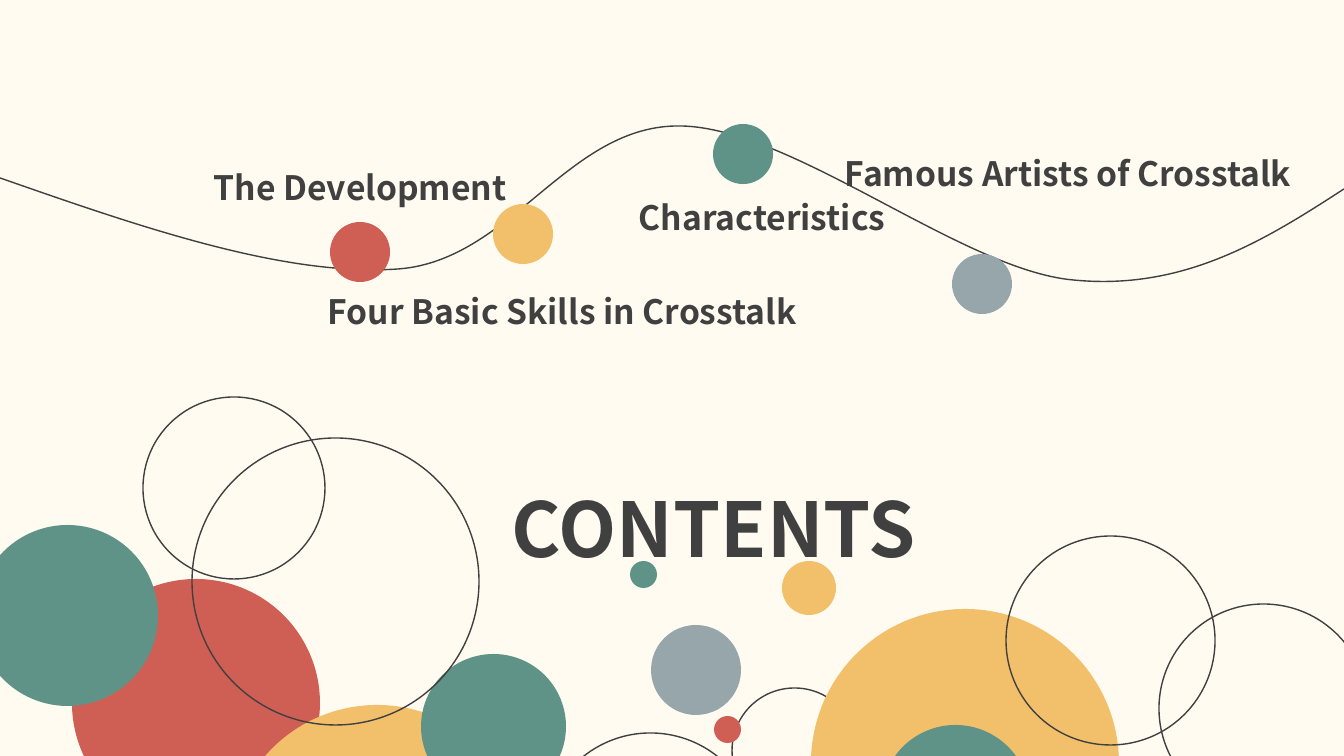
from lxml.etree import SubElement
from pptx import Presentation
from pptx.dml.color import RGBColor
from pptx.enum.shapes import MSO_SHAPE as Shape
from pptx.oxml.ns import qn
from pptx.util import Pt

PX = 9075
WIDTH, HEIGHT = 1344, 756
FONT = "Noto Sans CJK SC"
CREAM, INK = "FFFBF0", "404040"
RED, YELLOW, GREEN, GREY = "CF5F55", "F2C06B", "5F9387", "97A6AB"
OUTLINE = None

BUBBLES = [
    (72, 579, 248, RED),
    (229, 705, 296, YELLOW),
    (421, 654, 145, GREEN),
    (543, 733, 215, OUTLINE),
    (192, 438, 287, OUTLINE),
    (-23, 525, 181, GREEN),
    (732, 688, 125, OUTLINE),
    (811, 609, 308, YELLOW),
    (881, 725, 149, GREEN),
    (1006, 536, 209, OUTLINE),
    (1159, 604, 209, OUTLINE),
    (651, 625, 90, GREY),
    (714, 716, 27, RED),
    (630, 561, 27, GREEN),
    (782, 561, 54, YELLOW),
    (143, 397, 182, OUTLINE),
]

WAVE_START = (0, 178)
WAVE_CURVES = [
    [(143, 228), (285, 277), (399, 269)],
    [(512, 260), (568, 124), (681, 126)],
    [(793, 128), (962, 270), (1073, 280)],
    [(1183, 291), (1264, 241), (1344, 189)],
]

MARKER_SIZE = 60
TOPICS = [
    ("The Development", (204, 162, 322), (330, 222), RED),
    ("Four Basic Skills in Crosstalk", (318, 286, 510), (493, 204), YELLOW),
    ("Characteristics", (629, 192, 313), (713, 124), GREEN),
    ("Famous Artists of Crosstalk", (835, 148, 510), (952, 254), GREY),
]


def paint(fill, color):
    fill.solid()
    fill.fore_color.rgb = RGBColor.from_string(color)


def style_outline(shape):
    shape.shadow.inherit = False
    shape.fill.background()
    paint(shape.line.fill, INK)
    shape.line.width = Pt(1)


def add_circle(page, left, top, size, color):
    circle = page.shapes.add_shape(
        Shape.OVAL, left * PX, top * PX, size * PX, size * PX)
    if color is OUTLINE:
        style_outline(circle)
    else:
        circle.shadow.inherit = False
        paint(circle.fill, color)
        circle.line.fill.background()


def add_wave(page, start, curves):
    knots = [curve[-1] for curve in curves]
    builder = page.shapes.build_freeform(*start, scale=PX)
    builder.add_line_segments(knots, close=False)
    wave = builder.convert_to_shape()
    style_outline(wave)
    left = min(x for x, y in [start, *knots])
    top = min(y for x, y in [start, *knots])
    outline = next(wave.element.iter(qn("a:path")))
    outline.set("w", str(wave.width))
    outline.set("h", str(wave.height))
    move = outline.find(qn("a:moveTo")).find(qn("a:pt"))
    move.set("x", str((start[0] - left) * PX))
    move.set("y", str((start[1] - top) * PX))
    for segment in outline.findall(qn("a:lnTo")):
        outline.remove(segment)
    for curve in curves:
        bezier = SubElement(outline, qn("a:cubicBezTo"))
        for x, y in curve:
            SubElement(bezier, qn("a:pt"),
                       x=str((x - left) * PX), y=str((y - top) * PX))


def add_label(page, text, left, top, width, height=50, size=24):
    box = page.shapes.add_textbox(
        left * PX, top * PX, width * PX, height * PX)
    box.text_frame.word_wrap = True
    para = box.text_frame.paragraphs[0]
    para.text = text
    para.font.name = FONT
    para.font.size = Pt(size)
    para.font.bold = True
    paint(para.font.fill, INK)


def main():
    deck = Presentation()
    deck.slide_width, deck.slide_height = WIDTH * PX, HEIGHT * PX
    page = deck.slides.add_slide(deck.slide_layouts[6])
    paint(page.background.fill, CREAM)
    for bubble in BUBBLES:
        add_circle(page, *bubble)
    add_wave(page, WAVE_START, WAVE_CURVES)
    for text, place, marker, color in TOPICS:
        add_circle(page, *marker, MARKER_SIZE, color)
        add_label(page, text, *place)
    add_label(page, "CONTENTS", 502, 477, 510, height=102, size=54)
    deck.save("out.pptx")


if __name__ == "__main__":
    main()
